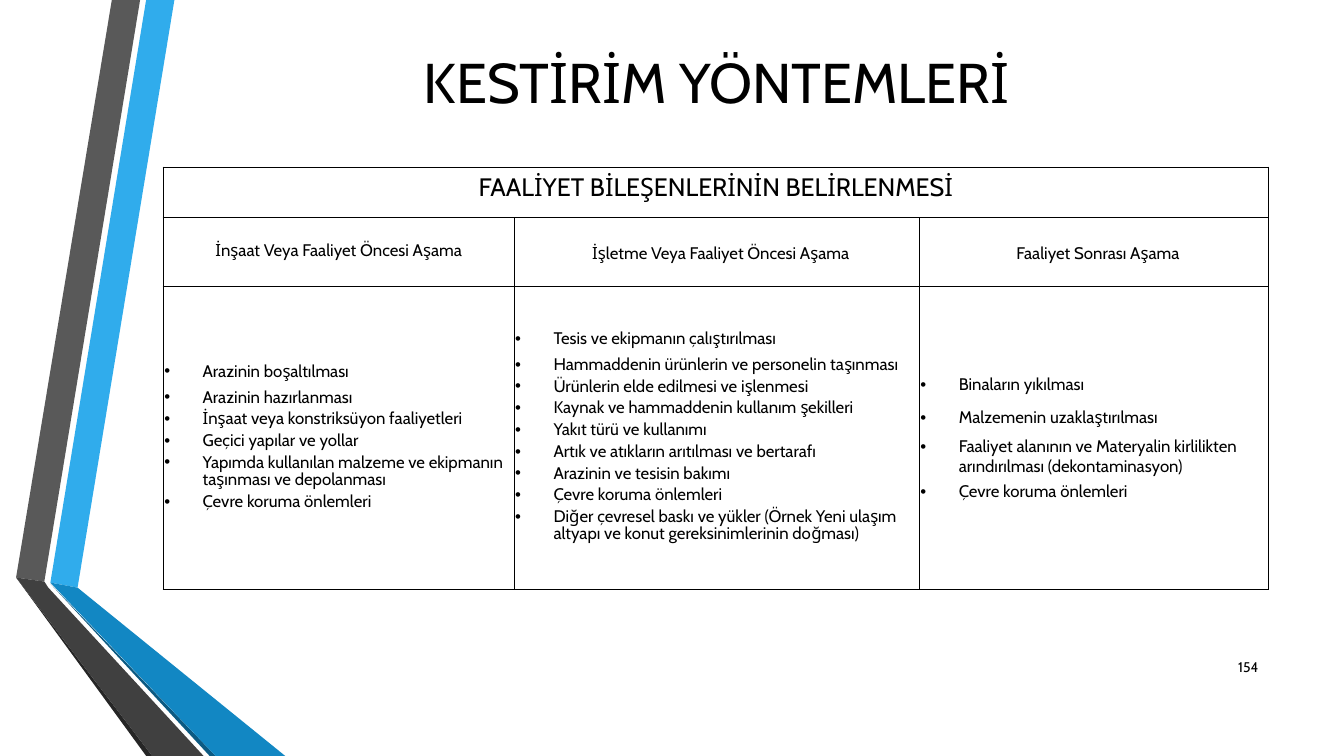
from lxml.etree import SubElement
from pptx import Presentation
from pptx.dml.color import RGBColor
from pptx.enum.text import MSO_ANCHOR, MSO_AUTO_SIZE, PP_ALIGN
from pptx.oxml.ns import qn
from pptx.util import Pt

PX = 9144
FONT = "Cabin"
BLACK = RGBColor(0x00, 0x00, 0x00)
BLUE = RGBColor(0x30, 0xAC, 0xEC)
DEEP_BLUE = RGBColor(0x12, 0x87, 0xC3)
NAVY = RGBColor(0x0C, 0x5A, 0x82)
GREY = RGBColor(0x59, 0x59, 0x59)
DARK_GREY = RGBColor(0x40, 0x40, 0x40)
CHARCOAL = RGBColor(0x26, 0x26, 0x26)

RIBBONS = [
    (BLUE, [(50, 578), (77, 583), (173, 0), (145, 0)]),
    (GREY, [(139, 0), (111, 0), (16, 573), (44, 577)]),
    (CHARCOAL, [(16, 573), (145, 750), (151, 750)]),
    (NAVY, [(50, 579), (208, 750), (214, 750)]),
    (DEEP_BLUE, [(50, 578), (214, 750), (283, 750), (77, 583)]),
    (DARK_GREY, [(202, 750), (48, 583), (44, 577), (16, 573), (151, 750)]),
]
COLUMN_WIDTHS = [348, 402, 346]
ROW_HEIGHTS = [50, 68, 301]
STAGES = ["İnşaat Veya Faaliyet Öncesi Aşama", "İşletme Veya Faaliyet Öncesi Aşama", "Faaliyet Sonrası Aşama"]
STAGE_SPACINGS = [Pt(12.2), 1.15, 1.15]
STAGE_INDENTS = [0, 8, 8]
FIRST = (Pt(12.2), 39, 3)
NEXT = (Pt(12.5), 3, 0)
ACTIVITIES = [
    [
        ("Arazinin boşaltılması", FIRST),
        ("Arazinin hazırlanması", NEXT),
        ("İnşaat veya konstriksüyon faaliyetleri", NEXT),
        ("Geçici yapılar ve yollar", NEXT),
        ("Yapımda kullanılan malzeme ve ekipmanın taşınması ve depolanması", NEXT),
        ("Çevre koruma önlemleri", NEXT),
    ],
    [
        ("Tesis ve ekipmanın çalıştırılması", FIRST),
        ("Hammaddenin ürünlerin ve personelin taşınması", NEXT),
        ("Ürünlerin elde edilmesi ve işlenmesi", NEXT),
        ("Kaynak ve hammaddenin kullanım şekilleri", NEXT),
        ("Yakıt türü ve kullanımı", NEXT),
        ("Artık ve atıkların arıtılması ve bertarafı", NEXT),
        ("Arazinin ve tesisin bakımı", NEXT),
        ("Çevre koruma önlemleri", NEXT),
        ("Diğer çevresel baskı ve yükler (Örnek Yeni ulaşım altyapı ve konut gereksinimlerinin doğması)", NEXT),
    ],
    [
        ("Binaların yıkılması", (1.0, 6, 3)),
        ("Malzemenin uzaklaştırılması", (1.0, 6, 3)),
        ("Faaliyet alanının ve Materyalin kirlilikten arındırılması (dekontaminasyon)", (1.0, 3, 0)),
        ("Çevre koruma önlemleri", (1.0, 3, 0)),
    ],
]


def write(para, text, size, align):
    para.alignment = align
    span = para.add_run()
    span.text = text
    span.font.name = FONT
    span.font.size = Pt(size)
    span.font.color.rgb = BLACK


def outline(cell):
    properties = cell._tc.get_or_add_tcPr()
    for side in ("a:lnL", "a:lnR", "a:lnT", "a:lnB"):
        line = SubElement(properties, qn(side), w=str(Pt(1)))
        fill = SubElement(line, qn("a:solidFill"))
        SubElement(fill, qn("a:srgbClr"), val=str(BLACK))
    cell.fill.background()


deck = Presentation()
deck.slide_width = 1333 * PX
deck.slide_height = 750 * PX
page = deck.slides.add_slide(deck.slide_layouts[5])

for color, points in RIBBONS:
    builder = page.shapes.build_freeform(*points[0], scale=PX)
    builder.add_line_segments(points[1:], close=True)
    ribbon = builder.convert_to_shape()
    ribbon.shadow.inherit = False
    ribbon.fill.solid()
    ribbon.fill.fore_color.rgb = color
    ribbon.line.fill.background()

title = page.shapes.title
title.left, title.top, title.width, title.height = 163 * PX, 42 * PX, 1096 * PX, 77 * PX
title.text_frame.auto_size = MSO_AUTO_SIZE.NONE
title.text_frame.vertical_anchor = MSO_ANCHOR.MIDDLE
write(title.text_frame.paragraphs[0], "KESTİRİM YÖNTEMLERİ", 40, PP_ALIGN.CENTER)

table = page.shapes.add_table(
    3, 3, 162 * PX, 166 * PX, sum(COLUMN_WIDTHS) * PX, sum(ROW_HEIGHTS) * PX
).table
table.first_row = False
table.horz_banding = False
for column, width in zip(table.columns, COLUMN_WIDTHS):
    column.width = width * PX
for row, height in zip(table.rows, ROW_HEIGHTS):
    row.height = height * PX
for cell in table.iter_cells():
    outline(cell)

heading = table.cell(0, 0)
heading.merge(table.cell(0, 2))
write(heading.text_frame.paragraphs[0], "FAALİYET BİLEŞENLERİNİN BELİRLENMESİ", 18, PP_ALIGN.CENTER)

for index, stage in enumerate(STAGES):
    stage_cell, list_cell = table.cell(1, index), table.cell(2, index)
    for cell in (stage_cell, list_cell):
        cell.vertical_anchor = MSO_ANCHOR.MIDDLE
        cell.margin_left = cell.margin_right = PX
        cell.margin_top = cell.margin_bottom = 0

    para = stage_cell.text_frame.paragraphs[0]
    para.line_spacing = STAGE_SPACINGS[index]
    para._p.get_or_add_pPr().set("marL", str(STAGE_INDENTS[index] * PX))
    write(para, stage, 12, PP_ALIGN.CENTER)

    for number, (activity, (spacing, before, after)) in enumerate(ACTIVITIES[index]):
        frame = list_cell.text_frame
        para = frame.add_paragraph() if number else frame.paragraphs[0]
        para.line_spacing = spacing
        para.space_before = Pt(before)
        para.space_after = Pt(after)
        properties = para._p.get_or_add_pPr()
        properties.set("marL", str(38 * PX))
        properties.set("indent", str(-38 * PX))
        SubElement(properties, qn("a:buFont"), typeface="Arial")
        SubElement(properties, qn("a:buChar"), char="•")
        write(para, activity, 12, PP_ALIGN.LEFT)

box = page.shapes.add_textbox(1198 * PX, 642 * PX, 60 * PX, 40 * PX)
box.text_frame.word_wrap = True
box.text_frame.vertical_anchor = MSO_ANCHOR.MIDDLE
write(box.text_frame.paragraphs[0], "154", 10, PP_ALIGN.RIGHT)

deck.save("out.pptx")
